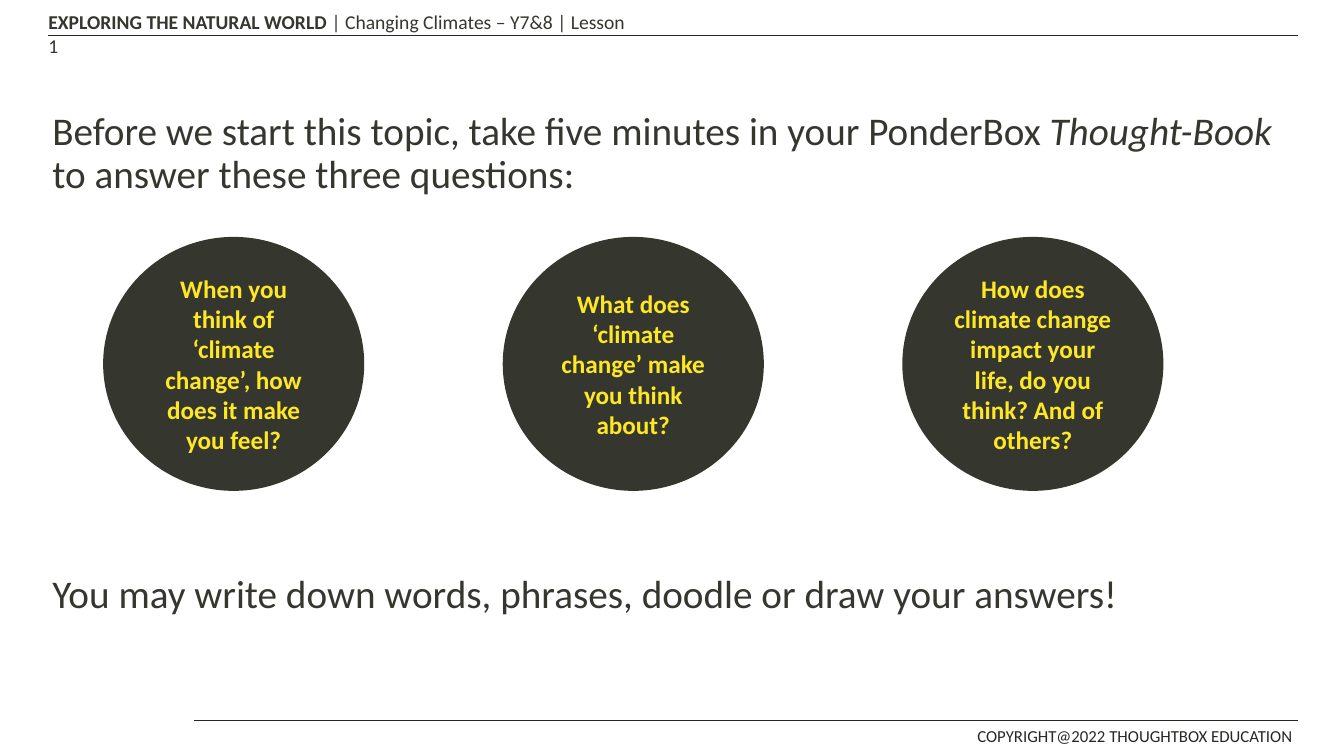
from dataclasses import dataclass

from pptx import Presentation
from pptx.dml.color import RGBColor
from pptx.enum import shapes, text
from pptx.oxml.ns import qn
from pptx.util import Cm, Pt


@dataclass(frozen=True)
class Theme:
    font: str = "Calibri"
    dark: RGBColor = RGBColor(0x35, 0x37, 0x2F)
    rule: RGBColor = RGBColor(0x25, 0x28, 0x23)
    yellow: RGBColor = RGBColor(0xFE, 0xE7, 0x25)
    lead: int = 28
    quiz: int = 18
    head: int = 14
    foot: int = 12


THEME = Theme()
QUIZ = (
    "When you think of ‘climate change’, how does it make you feel?",
    "What does ‘climate change’ make you think about?",
    "How does climate change impact your life, do you think? And of others?",
)


def style(para, size, color):
    font = para.font
    font.name, font.size, font.color.rgb = THEME.font, Pt(size), color


def add_text(slide, box, runs, size, color=THEME.dark):
    """Add wrapped text; each run is (words, bold, italic)."""
    frame = slide.shapes.add_textbox(*map(Cm, box)).text_frame
    frame.word_wrap = True
    para = frame.paragraphs[0]
    style(para, size, color)
    for words, bold, italic in runs:
        run = para.add_run()
        run.text = words
        run.font.bold, run.font.italic = bold, italic
    return frame


def add_rule(slide, left, right, top):
    line = slide.shapes.add_connector(
        shapes.MSO_CONNECTOR.STRAIGHT, Cm(left), Cm(top), Cm(right), Cm(top))
    line.line.color.rgb = THEME.rule
    line.line.width = Pt(1)
    props = line._element.spPr
    props.append(props.makeelement(qn("a:effectLst"), {}))


def add_disc(slide, left, words):
    disc = slide.shapes.add_shape(
        shapes.MSO_SHAPE.FLOWCHART_CONNECTOR,
        Cm(left), Cm(5.97), Cm(6.58), Cm(6.4))
    disc.shadow.inherit = False
    disc.fill.solid()
    disc.fill.fore_color.rgb = THEME.dark
    disc.line.fill.background()
    frame = disc.text_frame
    frame.word_wrap = True
    frame.vertical_anchor = text.MSO_ANCHOR.MIDDLE
    para = frame.paragraphs[0]
    para.text = words
    para.alignment = text.PP_ALIGN.CENTER
    style(para, THEME.quiz, THEME.yellow)
    para.font.bold = True


def main():
    deck = Presentation()
    deck.slide_width, deck.slide_height = Cm(33.87), Cm(19.05)
    slide = deck.slides.add_slide(deck.slide_layouts[6])

    add_rule(slide, 1.2, 32.72, 0.89)
    add_rule(slide, 4.88, 32.72, 18.16)
    add_text(slide, (0.97, 0.13, 15.19, 0.86), [
        ("EXPLORING THE NATURAL WORLD ", True, False),
        ("| Changing Climates – Y7&8 | Lesson 1", False, False),
    ], THEME.head)
    add_text(slide, (24.38, 18.16, 8.64, 0.79), [
        ("COPYRIGHT@2022 THOUGHTBOX EDUCATION", False, False),
    ], THEME.foot, THEME.rule)

    title = add_text(slide, (1.07, 2.24, 31.65, 3.3), [
        ("Before we start this topic, take five minutes in your PonderBox ",
         False, False),
        ("Thought-Book", False, True),
        (" to answer these three questions:", False, False),
    ], THEME.lead)
    title.vertical_anchor = text.MSO_ANCHOR.MIDDLE
    title.paragraphs[0].line_spacing = 0.9

    for i, words in enumerate(QUIZ):
        add_disc(slide, 2.6 + 10.07 * i, words)
    add_text(slide, (1.07, 14.22, 31.55, 1.45), [
        ("You may write down words, phrases, doodle or draw your answers!",
         False, False),
    ], THEME.lead)
    deck.save("out.pptx")


if __name__ == "__main__":
    main()
